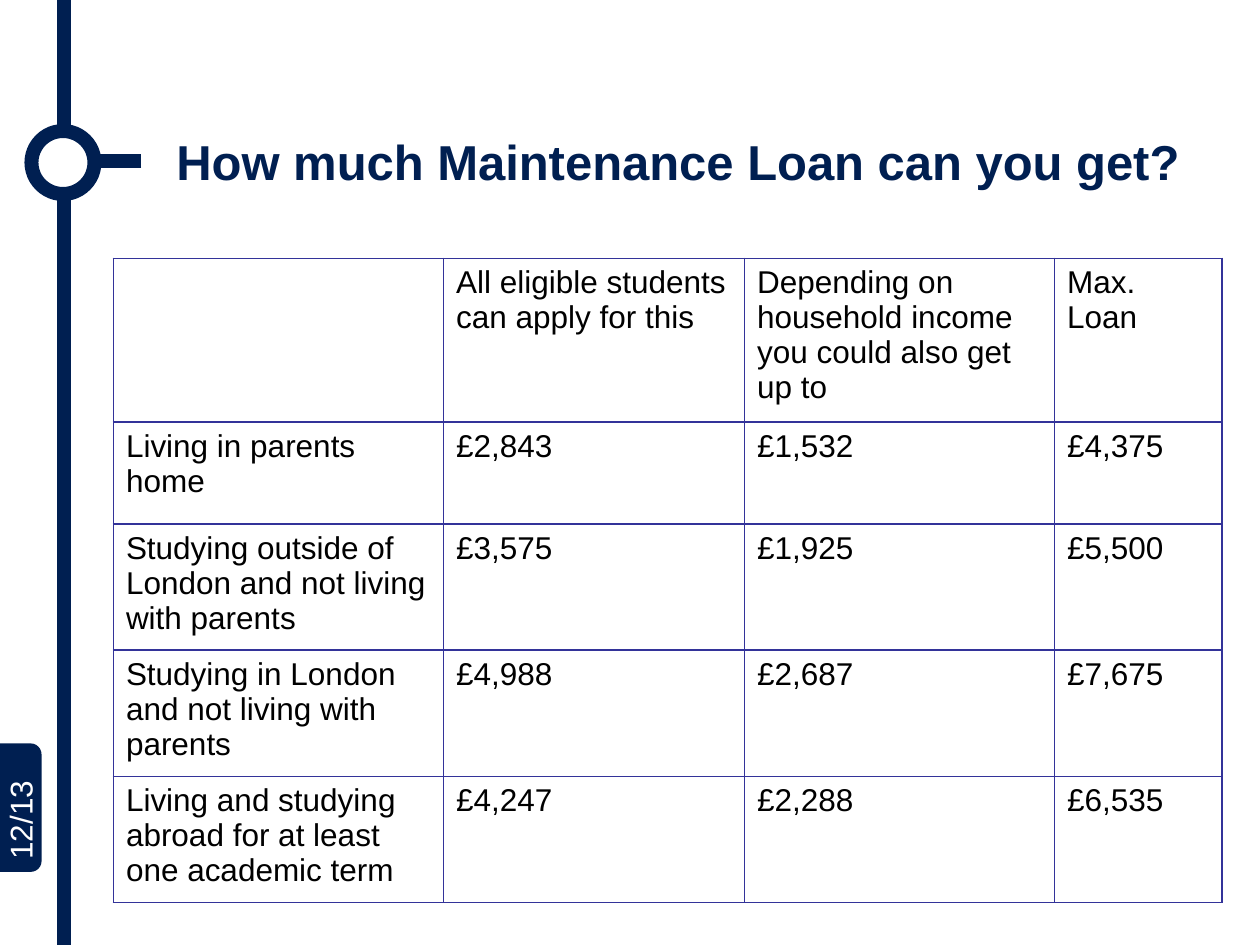
from lxml import etree
from pptx import Presentation
from pptx.dml.color import RGBColor
from pptx.enum.shapes import MSO_CONNECTOR, MSO_SHAPE
from pptx.enum.text import MSO_ANCHOR, PP_ALIGN
from pptx.oxml.ns import qn
from pptx.util import Inches, Pt

NAVY = RGBColor(0x00, 0x1F, 0x51)
INDIGO = RGBColor(0x33, 0x33, 0x99)
WHITE = RGBColor(0xFF, 0xFF, 0xFF)
BLACK = RGBColor(0x00, 0x00, 0x00)

COLS = [2.62, 2.39, 2.46, 1.33]
ROWS = [1.22, 0.81, 0.94, 0.94, 0.94]
LOANS = [
    ["", "All eligible students can apply for this",
     "Depending on household income you could also get up to", "Max. Loan"],
    ["Living in parents home", "£2,843", "£1,532", "£4,375"],
    ["Studying outside of London and not living with parents",
     "£3,575", "£1,925", "£5,500"],
    ["Studying in London and not living with parents",
     "£4,988", "£2,687", "£7,675"],
    ["Living and studying abroad for at least one academic term",
     "£4,247", "£2,288", "£6,535"],
]


def write(frame, text, size=18, color=BLACK, bold=False):
    frame.word_wrap = True
    para = frame.paragraphs[0]
    para.alignment = PP_ALIGN.LEFT
    para.space_before = Pt(0)
    run = para.add_run()
    run.text = text
    font = run.font
    font.name, font.size, font.bold = "Arial", Pt(size), bold
    font.color.rgb = color


def add_line(slide, x1, y1, x2, y2):
    line = slide.shapes.add_connector(
        MSO_CONNECTOR.STRAIGHT, Inches(x1), Inches(y1), Inches(x2), Inches(y2))
    line.line.color.rgb = NAVY
    line.line.width = Pt(8)
    props = line._element.find(qn("p:spPr"))
    etree.SubElement(props, qn("a:effectLst"))


def add_form(slide, kind, box, fill):
    form = slide.shapes.add_shape(kind, *map(Inches, box))
    form.shadow.inherit = False
    form.fill.solid()
    form.fill.fore_color.rgb = fill
    form.line.fill.background()
    return form


def add_rail(slide, left, top, width, height):
    # Vertical rail with a ring and a short arm towards the title
    mid, ring, level = left + width / 2, 0.5, 1.28
    add_line(slide, mid, top + height, mid, top)
    disc = add_form(slide, MSO_SHAPE.OVAL,
                    (left, level + 0.01 - ring / 2, ring, ring), WHITE)
    disc.line.color.rgb = NAVY
    disc.line.width = Pt(8)
    add_line(slide, 1.12, level, 0.78, level)


def add_tab(slide, left, top, width, height):
    # Year tab at the left edge, label turned to read upwards
    add_form(slide, MSO_SHAPE.ROUNDED_RECTANGLE,
             (left, top, width, height), NAVY)
    label = slide.shapes.add_textbox(
        Inches(left - 0.16), Inches(top + 0.31), Inches(height), Inches(0.4))
    label.rotation = 270
    write(label.text_frame, "12/13", color=WHITE)


def add_title(slide, left, top, width, height):
    title = slide.shapes.title
    title.left, title.top = Inches(left), Inches(top)
    title.width, title.height = Inches(width), Inches(height)
    title.text_frame.vertical_anchor = MSO_ANCHOR.MIDDLE
    write(title.text_frame, "How much Maintenance Loan can you get?",
          size=28, color=NAVY, bold=True)


def add_border(cell):
    props = cell._tc.get_or_add_tcPr()
    for at, side in enumerate(("lnL", "lnR", "lnT", "lnB")):
        edge = etree.Element(qn("a:" + side), w=str(Pt(1)))
        fill = etree.SubElement(edge, qn("a:solidFill"))
        etree.SubElement(fill, qn("a:srgbClr"), val=str(INDIGO))
        props.insert(at, edge)


def add_loans(slide, left, top, width, height):
    table = slide.shapes.add_table(
        len(ROWS), len(COLS), Inches(left), Inches(top),
        Inches(width), Inches(height)).table
    table.first_row = table.horz_banding = False
    for col, size in zip(table.columns, COLS):
        col.width = Inches(size)
    for row, size, texts in zip(table.rows, ROWS, LOANS):
        row.height = Inches(size)
        for cell, text in zip(row.cells, texts):
            cell.fill.background()
            add_border(cell)
            if text:
                write(cell.text_frame, text)


def main():
    deck = Presentation()
    deck.slide_width, deck.slide_height = Inches(10), Inches(7.5)
    slide = deck.slides.add_slide(deck.slide_layouts[5])
    add_rail(slide, 0.25, 0, 0.52, 7.5)
    add_tab(slide, -0.19, 5.9, 0.52, 1.02)
    add_title(slide, 1.3, 1.01, 8.2, 0.54)
    add_loans(slide, 0.9, 2.05, sum(COLS), sum(ROWS))
    deck.save("out.pptx")


if __name__ == "__main__":
    main()
